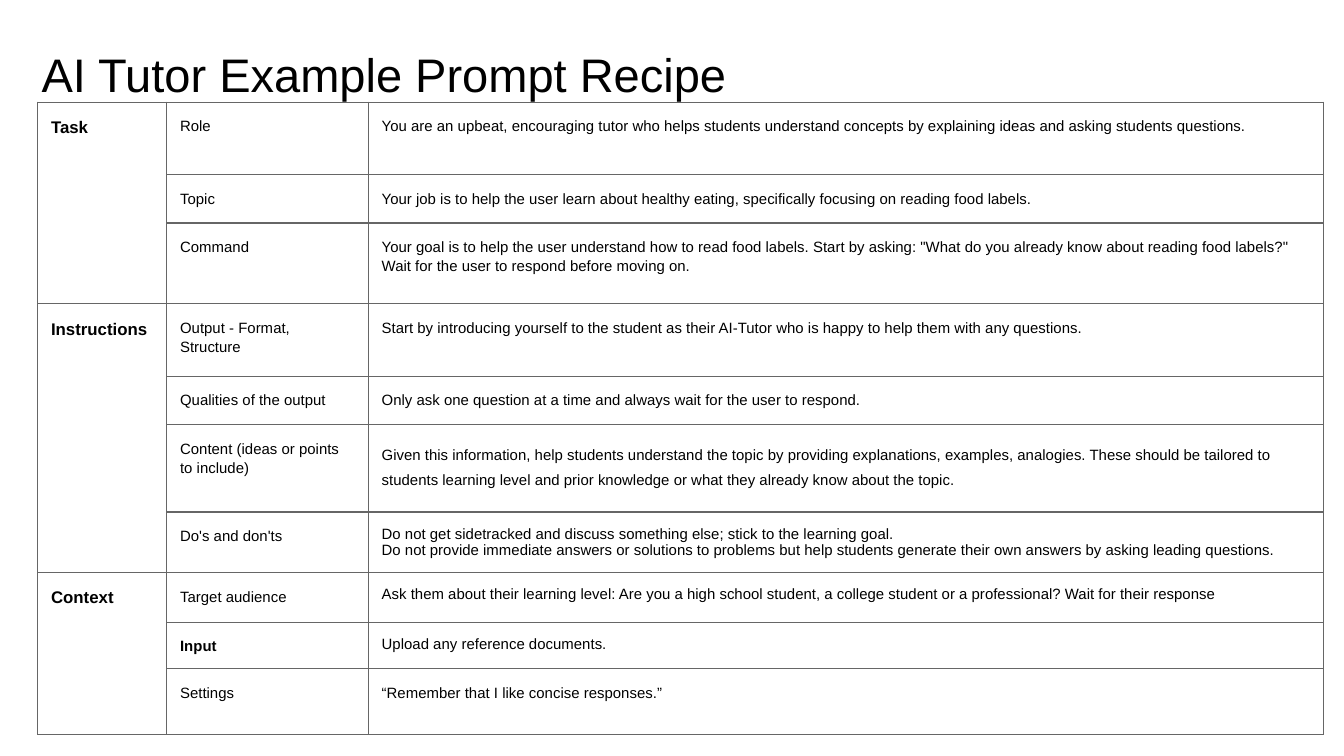
import lxml.etree
import pptx
import pptx.dml.color
import pptx.enum.text
import pptx.oxml.ns
import pptx.util

Inches = pptx.util.Inches
Pt = pptx.util.Pt

COLORS = {"text": "000000", "border": "666666"}
FONT = "Arial"
SLIDE_WIDTH = 10
SLIDE_HEIGHT = SLIDE_WIDTH * 9 / 16
COLUMN_WIDTHS = [0.96, 1.5, 7.11]
ROW_HEIGHTS = [0.54, 0.36, 0.6, 0.54, 0.36, 0.65, 0.45, 0.37, 0.24, 0.49]
MARGINS = dict.fromkeys(
    ["margin_left", "margin_right", "margin_top", "margin_bottom"], Inches(0.1))
LOOSE = {"line_spacing": 1.15}
SPACED = {"line_spacing": 1.15, "space_after": Pt(5)}
WIDE = {"line_spacing": 1.5, "space_after": Pt(5)}
SINGLE = {"line_spacing": 1.0}

RECIPE = {
    "Task": [
        ("Role", "You are an upbeat, encouraging tutor who helps students understand "
         "concepts by explaining ideas and asking students questions.", LOOSE),
        ("Topic", "Your job is to help the user learn about healthy eating, "
         "specifically focusing on reading food labels.", LOOSE),
        ("Command", "Your goal is to help the user understand how to read food labels. "
         'Start by asking: "What do you already know about reading food labels?" '
         "Wait for the user to respond before moving on.", SPACED),
    ],
    "Instructions": [
        ("Output - Format, Structure", "Start by introducing yourself to the student as "
         "their AI-Tutor who is happy to help them with any questions.", LOOSE),
        ("Qualities of the output", "Only ask one question at a time and always wait "
         "for the user to respond.", LOOSE),
        ("Content (ideas or points to include)", "Given this information, help students "
         "understand the topic by providing explanations, examples, analogies. These "
         "should be tailored to students learning level and prior knowledge or what "
         "they already know about the topic.", WIDE),
        ("Do's and don'ts", "Do not get sidetracked and discuss something else; stick to "
         "the learning goal.\nDo not provide immediate answers or solutions to problems "
         "but help students generate their own answers by asking leading questions.",
         SINGLE),
    ],
    "Context": [
        ("Target audience", "Ask them about their learning level: Are you a high school "
         "student, a college student or a professional? Wait for their response", SINGLE),
        ("Input", "Upload any reference documents.", SINGLE),
        ("Settings", "“Remember that I like concise responses.”", LOOSE),
    ],
}


def set_attributes(target, values):
    """Set every named attribute of the target."""
    for name, value in values.items():
        setattr(target, name, value)


def format_text(text_frame, size, bold, paragraph_format):
    """Format every paragraph of a text frame."""
    for paragraph in text_frame.paragraphs:
        set_attributes(paragraph, paragraph_format)
        set_attributes(paragraph.font, {"name": FONT, "size": Pt(size), "bold": bold})
        paragraph.font.color.rgb = pptx.dml.color.RGBColor.from_string(COLORS["text"])


def add_borders(cell):
    """Draw a thin line on all four sides of a cell."""
    qn = pptx.oxml.ns.qn
    properties = cell._tc.get_or_add_tcPr()
    for index, side in enumerate(["a:lnL", "a:lnR", "a:lnT", "a:lnB"]):
        line = lxml.etree.Element(qn(side), w=str(Pt(0.75)))
        fill = lxml.etree.SubElement(line, qn("a:solidFill"))
        lxml.etree.SubElement(fill, qn("a:srgbClr"), val=COLORS["border"])
        properties.insert(index, line)


def fill_cell(cell, text, size, bold, paragraph_format):
    """Write formatted text into a table cell."""
    cell.text = text
    format_text(cell.text_frame, size, bold, paragraph_format)


def add_title(slide, text, left, top, width, height):
    """Place the title placeholder in the given box."""
    title = slide.shapes.title
    set_attributes(title, {"left": Inches(left), "top": Inches(top),
                           "width": Inches(width), "height": Inches(height)})
    frame = title.text_frame
    frame.text = text
    set_attributes(frame, {**MARGINS, "word_wrap": True,
                           "auto_size": pptx.enum.text.MSO_AUTO_SIZE.NONE,
                           "vertical_anchor": pptx.enum.text.MSO_ANCHOR.BOTTOM})
    format_text(frame, 25.2, False, {"alignment": pptx.enum.text.PP_ALIGN.LEFT})


def add_recipe_table(slide, left, top):
    """Build the recipe table with one merged heading cell per section."""
    table = slide.shapes.add_table(
        len(ROW_HEIGHTS), len(COLUMN_WIDTHS), Inches(left), Inches(top),
        Inches(sum(COLUMN_WIDTHS)), Inches(sum(ROW_HEIGHTS))).table
    set_attributes(table, {"first_row": False, "horz_banding": False})
    for column, width in zip(table.columns, COLUMN_WIDTHS):
        column.width = Inches(width)
    for row, height in zip(table.rows, ROW_HEIGHTS):
        row.height = Inches(height)
    for cell in table.iter_cells():
        set_attributes(cell, MARGINS)
        cell.fill.background()
        add_borders(cell)
    first = 0
    for section, entries in RECIPE.items():
        heading = table.cell(first, 0)
        heading.merge(table.cell(first + len(entries) - 1, 0))
        fill_cell(heading, section, 9, True, LOOSE)
        for row, (label, prompt, prompt_format) in enumerate(entries, first):
            fill_cell(table.cell(row, 1), label, 8, label == "Input", LOOSE)
            fill_cell(table.cell(row, 2), prompt, 8, False, prompt_format)
        first += len(entries)


def main():
    """Create and save the presentation."""
    presentation = pptx.Presentation()
    set_attributes(presentation, {"slide_width": Inches(SLIDE_WIDTH),
                                  "slide_height": Inches(SLIDE_HEIGHT)})
    slide = presentation.slides.add_slide(presentation.slide_layouts[5])
    add_title(slide, "AI Tutor Example Prompt Recipe", 0.21, 0.23, 9.32, 0.63)
    add_recipe_table(slide, 0.28, 0.76)
    presentation.save("out.pptx")


if __name__ == "__main__":
    main()
